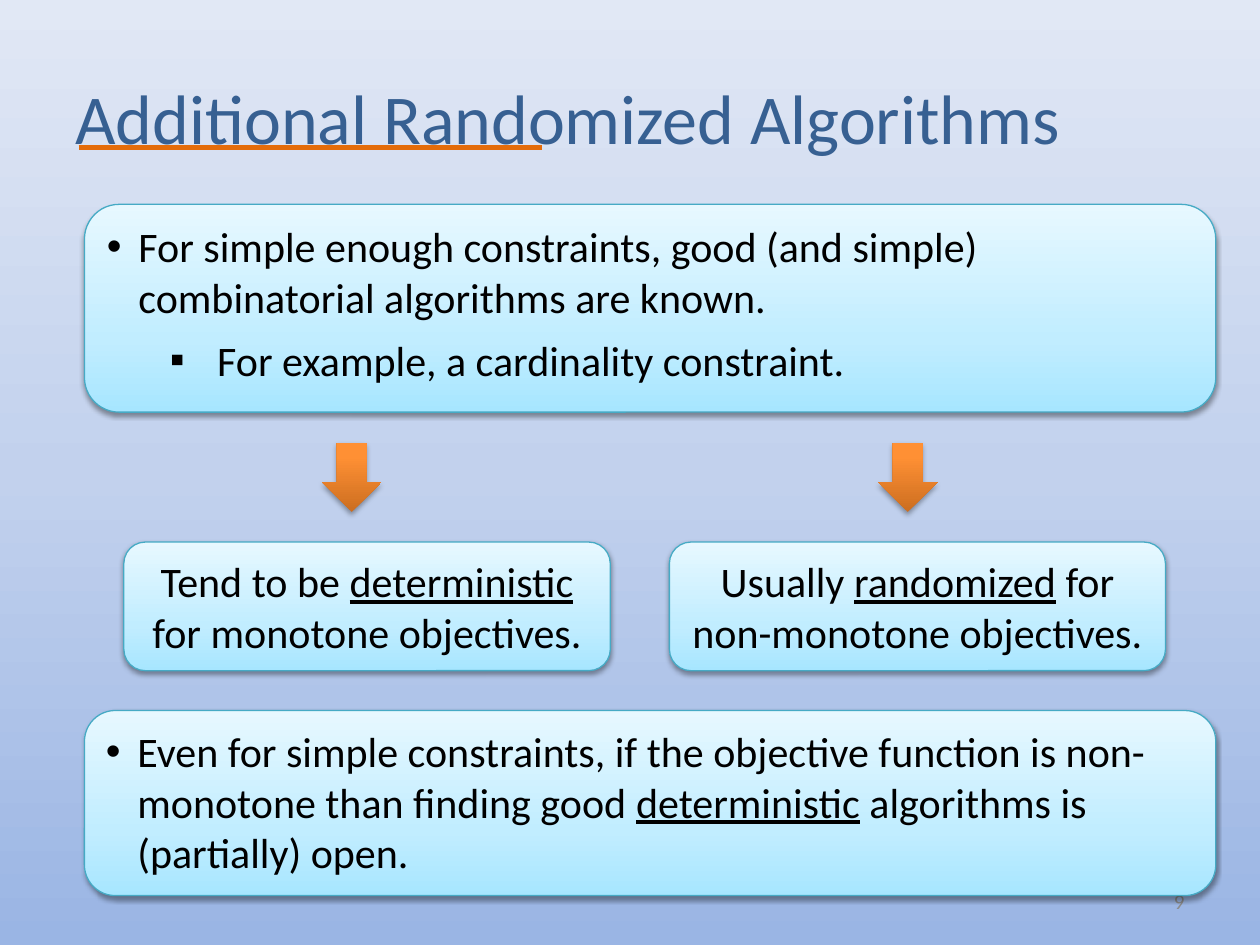
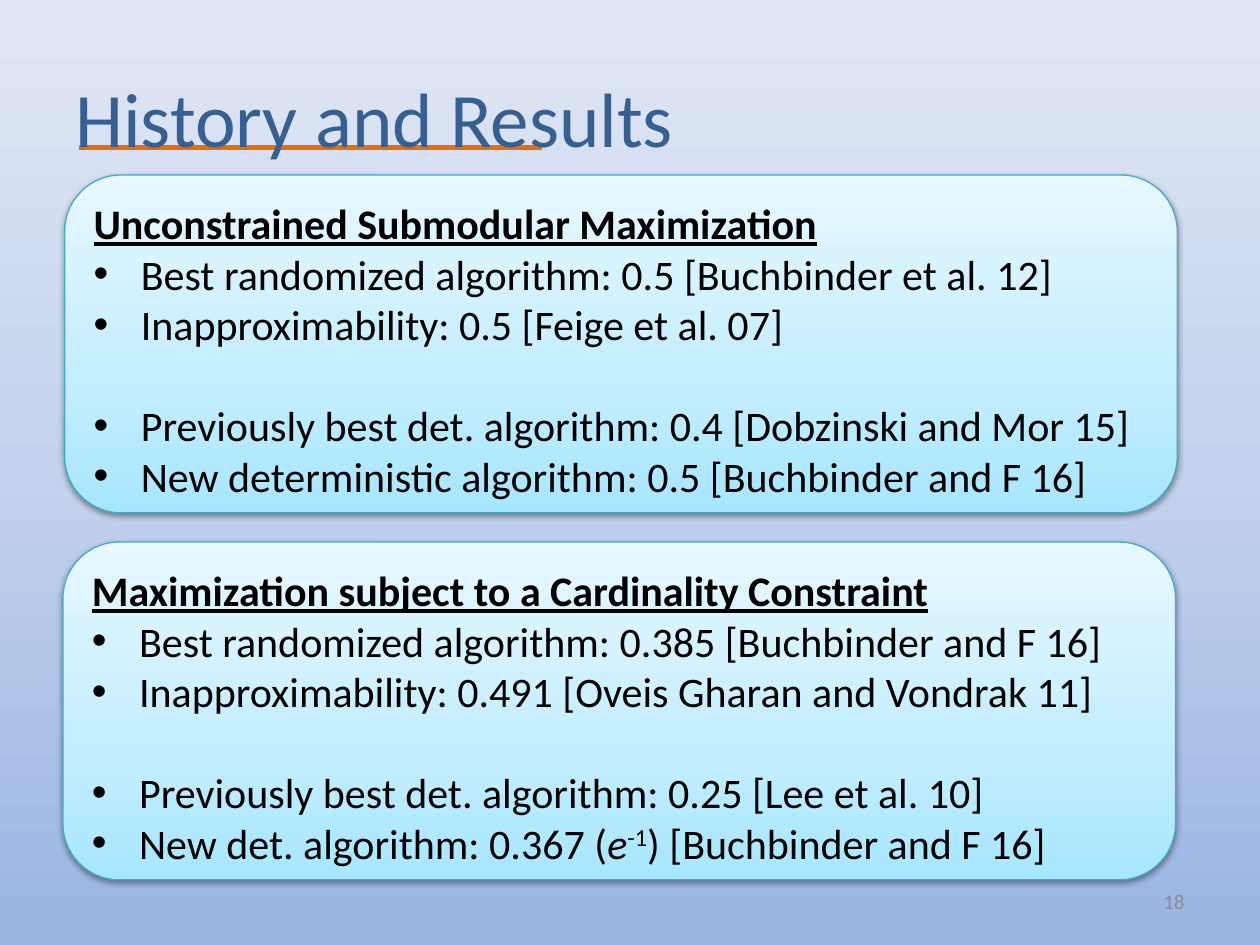
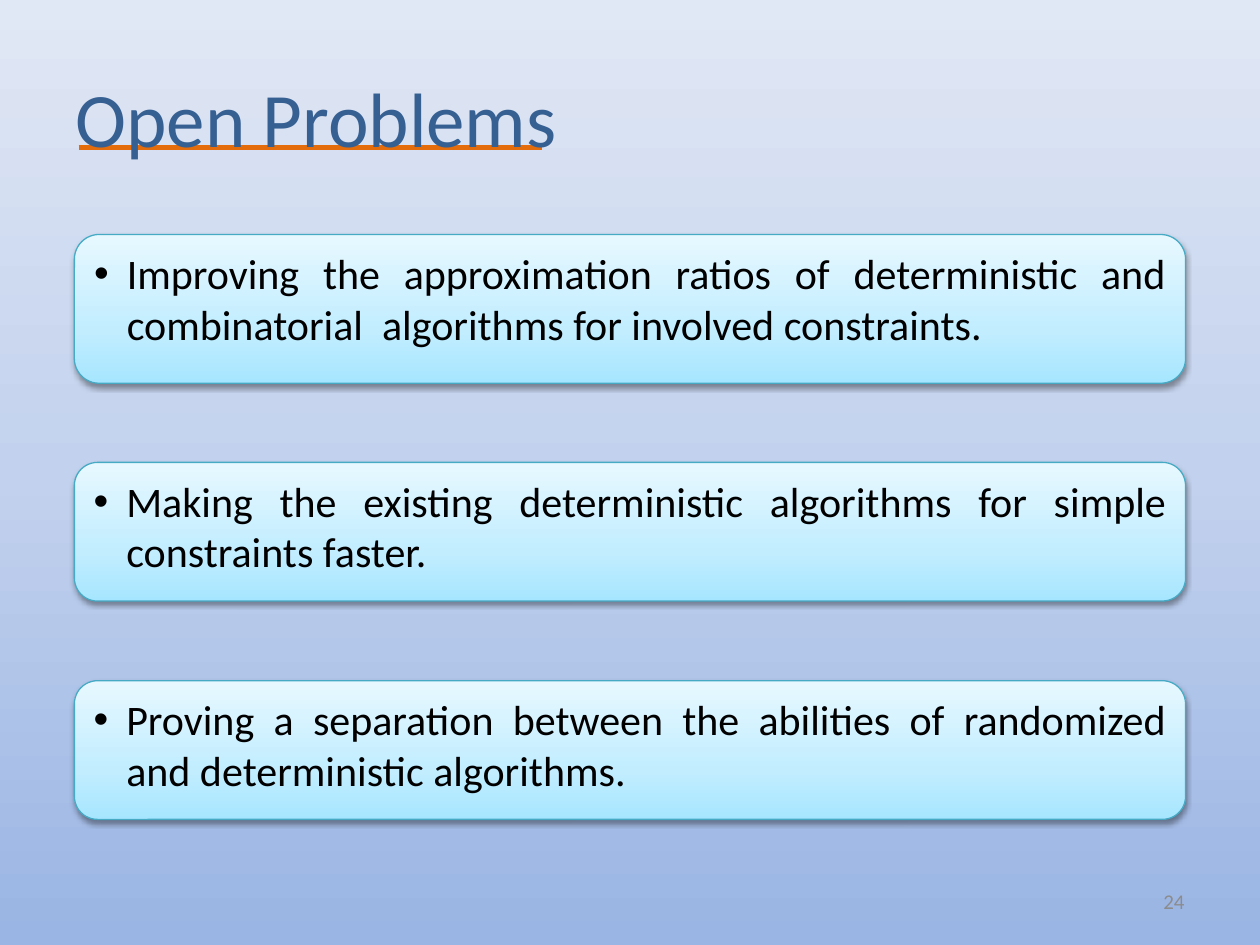
import pptx
import pptx.dml.color
import pptx.enum.shapes
import pptx.enum.text
import pptx.oxml
import pptx.oxml.ns
import pptx.util
from lxml import etree

Pt = pptx.util.Pt
RGBColor = pptx.dml.color.RGBColor
qn = pptx.oxml.ns.qn
ALIGN = pptx.enum.text.PP_ALIGN
ANCHOR = pptx.enum.text.MSO_ANCHOR
SHAPE = pptx.enum.shapes.MSO_SHAPE

BLACK = RGBColor(0x00, 0x00, 0x00)
TITLE_BLUE = RGBColor(0x37, 0x60, 0x92)
RULE_ORANGE = RGBColor(0xE4, 0x6C, 0x0A)
NUMBER_GREY = RGBColor(0x8C, 0x8C, 0x8C)
PANEL_EDGE = RGBColor(0x46, 0xAA, 0xC5)
PAGE_STOPS = [
    (0, RGBColor(0x9A, 0xB5, 0xE4)),
    (50, RGBColor(0xC2, 0xD1, 0xED)),
    (100, RGBColor(0xE1, 0xE8, 0xF5)),
]
PANEL_STOPS = [
    (0, RGBColor(0xA7, 0xE6, 0xFF)),
    (35, RGBColor(0xC1, 0xED, 0xFF)),
    (100, RGBColor(0xE7, 0xF8, 0xFF)),
]
ARROW_STOPS = [
    (0, RGBColor(0xCC, 0x6E, 0x20)),
    (80, RGBColor(0xFF, 0x90, 0x34)),
    (100, RGBColor(0xFF, 0x91, 0x36)),
]

PLAIN = {"alignment": ALIGN.LEFT}
CENTERED = {"alignment": ALIGN.CENTER}
RIGHT = {"alignment": ALIGN.RIGHT}
POINT = {"alignment": ALIGN.LEFT, "space_after": Pt(7.2)}
JUSTIFIED = {"alignment": ALIGN.JUSTIFY}
GROUP_END = {"alignment": ALIGN.LEFT, "space_after": Pt(29)}
DOT = ("•", 18, 18)
SQUARE = ("▪", 63, 27)
WIDE_DOT = ("•", 27, 27)
PROBLEM_DOT = ("•", 18.75, 18.75)
UNDERLINED = {"underline": True}
HEADING = {"bold": True, "underline": True}


def set_gradient(fill, owner, stops):
    """Fill an element with a vertical gradient that runs from bottom to top."""
    fill.gradient()
    fill.gradient_angle = 90
    stop_list = owner.find(".//" + qn("a:gsLst"))
    for old_stop in list(stop_list):
        stop_list.remove(old_stop)
    for position, color in stops:
        stop = etree.SubElement(stop_list, qn("a:gs"), pos=str(position * 1000))
        etree.SubElement(stop, qn("a:srgbClr"), val=str(color))


def set_shadow(shape, opacity, distance):
    """Give a shape a soft shadow straight below it."""
    shape.shadow.inherit = False
    effects = shape._element.spPr.find(qn("a:effectLst"))
    shadow = etree.SubElement(
        effects, qn("a:outerShdw"), blurRad=str(Pt(3.1)),
        dist=str(Pt(distance)), dir="5400000", rotWithShape="0")
    black = etree.SubElement(shadow, qn("a:srgbClr"), val=str(BLACK))
    etree.SubElement(black, qn("a:alpha"), val=str(opacity * 1000))


def set_bullet(paragraph, bullet):
    """Hang a bullet mark in front of a paragraph."""
    mark, margin, hang = bullet
    properties = paragraph._p.get_or_add_pPr()
    properties.set("marL", str(Pt(margin)))
    properties.set("indent", str(-Pt(hang)))
    etree.SubElement(properties, qn("a:buFont"), typeface="Arial")
    etree.SubElement(properties, qn("a:buChar"), char=mark)


def add_run(paragraph, words, color, size, baseline=None, **formats):
    """Add one run of text with its font formats."""
    run = paragraph.add_run()
    run.text = words
    run.font.color.rgb = color
    for attribute, value in {"name": "Calibri", "size": Pt(size), **formats}.items():
        setattr(run.font, attribute, value)
    if baseline:
        run._r.get_or_add_rPr().set("baseline", str(baseline * 1000))


def write(shape, paragraphs, anchor, color=BLACK, size=24):
    """Write (layout, bullet, runs) paragraphs into a shape."""
    frame = shape.text_frame
    frame.word_wrap = True
    frame.vertical_anchor = anchor
    for index, (layout, bullet, runs) in enumerate(paragraphs):
        paragraph = frame.add_paragraph() if index else frame.paragraphs[0]
        for attribute, value in layout.items():
            setattr(paragraph, attribute, value)
        if bullet:
            set_bullet(paragraph, bullet)
        for words, formats in runs:
            add_run(paragraph, words, color, size, **formats)


def add_label(slide, bounds, words, layout, color, size):
    """Add a one-line text box centred on its height."""
    label = slide.shapes.add_textbox(*map(Pt, bounds))
    write(label, [(layout, None, [(words, {})])], ANCHOR.MIDDLE, color, size)


def add_page(deck, title, number, title_size=44):
    """Add a slide with the shared background, title rule, title and number."""
    slide = deck.slides.add_slide(deck.slide_layouts[6])
    set_gradient(slide.background.fill, slide._element, PAGE_STOPS)
    rule = slide.shapes.add_connector(
        pptx.enum.shapes.MSO_CONNECTOR.STRAIGHT, Pt(45), Pt(84.25), Pt(309.5), Pt(84.25))
    rule.line.color.rgb = RULE_ORANGE
    rule.line.width = Pt(3)
    etree.SubElement(rule._element.spPr, qn("a:effectLst"))
    add_label(slide, (36, 21.5, 648, 90), title, PLAIN, TITLE_BLUE, title_size)
    add_label(slide, (516, 500.5, 168, 28.75), str(number), RIGHT, NUMBER_GREY, 12)
    return slide


def add_panel(slide, bounds, paragraphs, anchor=ANCHOR.TOP):
    """Add a rounded, shaded panel with text."""
    panel = slide.shapes.add_shape(SHAPE.ROUNDED_RECTANGLE, *map(Pt, bounds))
    set_gradient(panel.fill, panel._element, PANEL_STOPS)
    panel.line.color.rgb = PANEL_EDGE
    panel.line.width = Pt(0.75)
    set_shadow(panel, 38, 1.6)
    write(panel, paragraphs, anchor)


def add_arrow(slide, left):
    """Add an orange arrow that points down to a consequence."""
    arrow = slide.shapes.add_shape(
        SHAPE.DOWN_ARROW, Pt(left), Pt(253), Pt(34), Pt(39.5))
    set_gradient(arrow.fill, arrow._element, ARROW_STOPS)
    arrow.line.fill.background()
    set_shadow(arrow, 35, 1.8)


def add_results(slide, left, top, heading, known, deterministic):
    """Add a panel of known bounds followed by deterministic results."""
    layouts = [PLAIN, GROUP_END, PLAIN, PLAIN]
    paragraphs = [(PLAIN, None, [(heading, HEADING)])]
    paragraphs += [(layout, WIDE_DOT, runs)
                   for layout, runs in zip(layouts, known + deterministic)]
    add_panel(slide, (left, top, 635.75, 193), paragraphs)


def build_algorithms(deck):
    """Build the slide on additional randomized algorithms."""
    slide = add_page(deck, "Additional Randomized Algorithms", 9, 40)
    add_panel(slide, (48.25, 116.75, 646.5, 118.75), [
        (POINT, DOT, [("For simple enough constraints, good (and simple) "
                       "combinatorial algorithms are known.", {})]),
        (POINT, SQUARE, [("For example, a cardinality constraint.", {})]),
    ])
    consequences = [
        (184, 70.75, 278, "Tend to be ", "deterministic", " for monotone objectives."),
        (501.75, 382.5, 283.5, "Usually ", "randomized", " for non-monotone objectives."),
    ]
    for arrow_left, left, width, start, kind, end in consequences:
        add_arrow(slide, arrow_left)
        runs = [(start, {}), (kind, UNDERLINED), (end, {})]
        add_panel(slide, (left, 309.75, width, 73.5), [(CENTERED, None, runs)],
                  ANCHOR.MIDDLE)
    add_panel(slide, (48.25, 406, 646.5, 105.75), [(POINT, DOT, [
        ("Even for simple constraints, if the objective function is "
         "non-monotone than finding good ", {}),
        ("deterministic", UNDERLINED),
        (" algorithms is (partially) open.", {}),
    ])])


def build_results(deck):
    """Build the slide on history and results."""
    slide = add_page(deck, "History and Results", 18)
    add_results(
        slide, 37, 100, "Unconstrained Submodular Maximization",
        [[("Best randomized algorithm: 0.5 [Buchbinder et al. 12]", {})],
         [("Inapproximability: 0.5 [Feige et al. 07]", {})]],
        [[("Previously best det. algorithm: 0.4 [Dobzinski and Mor 15]", {})],
         [("New deterministic algorithm: 0.5 [Buchbinder and F 16]", {})]])
    add_results(
        slide, 36, 309.75, "Maximization subject to a Cardinality Constraint",
        [[("Best randomized algorithm: 0.385 [Buchbinder and F 16]", {})],
         [("Inapproximability: 0.491 [Oveis Gharan and Vondrak 11]", {})]],
        [[("Previously best det. algorithm: 0.25 [Lee et al. 10]", {})],
         [("New det. algorithm: 0.367 (", {}), ("e", {"italic": True}),
          ("-1", {"baseline": 30}), (") [Buchbinder and F 16]", {})]])


def build_problems(deck):
    """Build the slide on open problems."""
    slide = add_page(deck, "Open Problems", 24)
    problems = [
        (134, 85, "Improving the approximation ratios of deterministic and "
                  "combinatorial  algorithms for involved constraints."),
        (264.25, 79.25, "Making the existing deterministic algorithms for simple "
                        "constraints faster."),
        (389, 79.25, "Proving a separation between the abilities of randomized "
                     "and deterministic algorithms."),
    ]
    for top, height, problem in problems:
        add_panel(slide, (42.5, top, 635, height),
                  [(JUSTIFIED, PROBLEM_DOT, [(problem, {})])])


def main():
    """Build the three slides and save the deck."""
    deck = pptx.Presentation()
    deck.slide_width = Pt(720)
    deck.slide_height = Pt(540)
    build_algorithms(deck)
    build_results(deck)
    build_problems(deck)
    deck.save("out.pptx")


if __name__ == "__main__":
    main()
